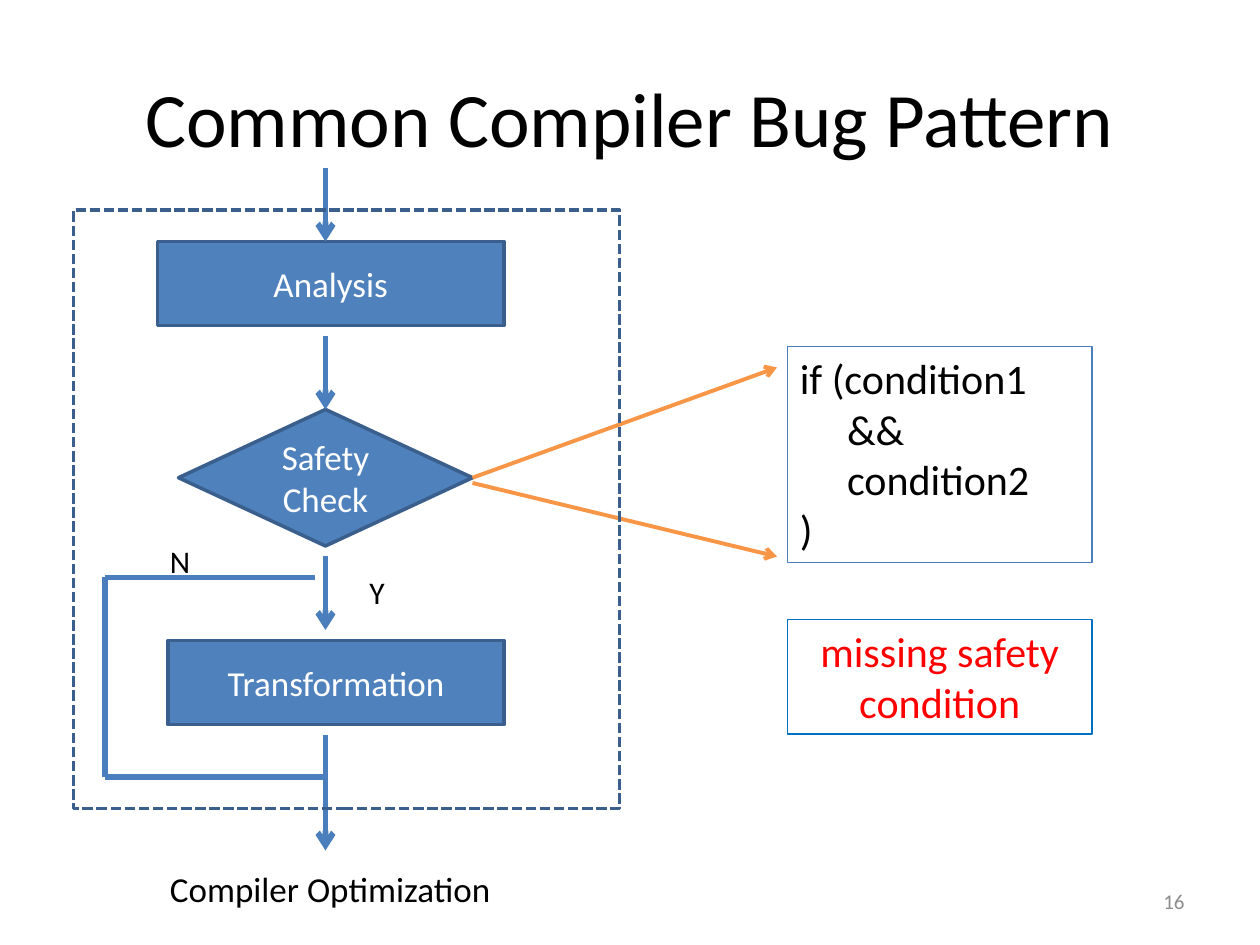
from lxml import etree
from pptx import Presentation
from pptx.dml.color import RGBColor
from pptx.enum.dml import MSO_LINE
from pptx.enum.shapes import MSO_CONNECTOR, MSO_SHAPE
from pptx.enum.text import MSO_ANCHOR, PP_ALIGN
from pptx.oxml.ns import qn
from pptx.util import Inches, Pt

LEFT, CENTER, RIGHT = PP_ALIGN.LEFT, PP_ALIGN.CENTER, PP_ALIGN.RIGHT
TOP, MIDDLE = MSO_ANCHOR.TOP, MSO_ANCHOR.MIDDLE
PROCESS, DECISION = MSO_SHAPE.FLOWCHART_PROCESS, MSO_SHAPE.FLOWCHART_DECISION
RECTANGLE = MSO_SHAPE.RECTANGLE

COLORS = {
    "black": "000000", "white": "FFFFFF", "gray": "8C8C8C", "red": "FF0000",
    "block": "4F81BD", "border": "3A5F8C", "flow": "4B7EBC",
    "callout": "F79646", "warning": "0070C0",
}
FONT = "Calibri"

# Every length below is in grid cells: 12 to the inch, 120 columns by 90 rows.
COLUMNS, ROWS, CELLS_PER_INCH = 120, 90, 12
FLOW_X = 31
CODE_INDENT = 4.5

# Content: (text, box, size, color, alignment, anchor)
LABELS = [
    ("Common Compiler Bug Pattern", (6, 3.6, 108, 15), 44, "black", CENTER, MIDDLE),
    ("Y", (34, 54, 6, 4.8), 18, "black", LEFT, TOP),
    ("N", (15, 51, 7, 4.8), 18, "black", LEFT, TOP),
    ("Compiler Optimization", (15, 82, 36, 5.3), 20, "black", LEFT, TOP),
    ("16", (86, 83.4, 28, 4.8), 12, "gray", RIGHT, MIDDLE),
]
BLOCKS = [
    ("Analysis", PROCESS, (15, 23, 33, 8)),
    ("Safety Check", DECISION, (17, 39, 28, 13)),
    ("Transformation", PROCESS, (16, 61, 32, 8)),
]
CODE_LINES = [("if (condition1", 0), ("&&", 1), ("condition2", 1), (")", 0)]
CODE_BOX = (75, 33, 29, 20.6)
WARNING_TEXT, WARNING_BOX = "missing safety condition", (75, 59, 29, 10.9)
OPTIMIZATION_FRAME = (7, 20, 52, 57)

FLOW_ARROW_ROWS = [(16, 23), (32, 39), (53, 60), (70, 81)]
SKIP_PATH = [(30, 55), (10, 55), (10, 74), (FLOW_X, 74)]
CALLOUT_ARROWS = [((45, 45.5), (74, 35)), ((45, 46), (74, 53))]


def cells(*values):
    return [Inches(value / CELLS_PER_INCH) for value in values]


def rgb(name):
    return RGBColor.from_string(COLORS[name])


def write(shape, lines, size, color, alignment, anchor):
    """Fill a shape with (text, indent level) lines."""
    frame = shape.text_frame
    frame.word_wrap = True
    frame.vertical_anchor = anchor
    for index, (text, level) in enumerate(lines):
        paragraph = frame.add_paragraph() if index else frame.paragraphs[0]
        paragraph.text = text
        paragraph.alignment = alignment
        paragraph.font.name = FONT
        paragraph.font.size = Pt(size)
        paragraph.font.color.rgb = rgb(color)
        if level:
            indent = cells(level * CODE_INDENT)[0]
            paragraph._p.get_or_add_pPr().set("marL", str(indent))


def add_box(slide, kind, box, line, width, fill=None):
    shape = slide.shapes.add_shape(kind, *cells(*box))
    shape.shadow.inherit = False
    if fill:
        shape.fill.solid()
        shape.fill.fore_color.rgb = rgb(fill)
    else:
        shape.fill.background()
    shape.line.color.rgb = rgb(line)
    shape.line.width = Pt(width)
    return shape


def add_line(slide, start, end, color, width, arrow=False):
    connector = slide.shapes.add_connector(
        MSO_CONNECTOR.STRAIGHT, *cells(*start, *end))
    connector.line.color.rgb = rgb(color)
    connector.line.width = Pt(width)
    if arrow:
        etree.SubElement(connector.line._ln, qn("a:tailEnd"), type="arrow")
    etree.SubElement(connector._element.spPr, qn("a:effectLst"))


def main():
    presentation = Presentation()
    presentation.slide_width, presentation.slide_height = cells(COLUMNS, ROWS)
    slide = presentation.slides.add_slide(presentation.slide_layouts[6])

    # Title, branch labels, caption and page number
    for text, box, size, color, alignment, anchor in LABELS:
        label = slide.shapes.add_textbox(*cells(*box))
        write(label, [(text, 0)], size, color, alignment, anchor)

    # Flowchart blocks
    for text, kind, box in BLOCKS:
        block = add_box(slide, kind, box, "border", 2, "block")
        write(block, [(text, 0)], 20, "white", CENTER, MIDDLE)

    # Main flow and the path that skips the transformation
    for top, bottom in FLOW_ARROW_ROWS:
        add_line(slide, (FLOW_X, top), (FLOW_X, bottom), "flow", 3.25, arrow=True)
    for start, end in zip(SKIP_PATH, SKIP_PATH[1:]):
        add_line(slide, start, end, "flow", 3.25)

    # Safety check detail
    code = add_box(slide, RECTANGLE, CODE_BOX, "flow", 0.75)
    write(code, CODE_LINES, 24, "black", LEFT, TOP)
    for start, end in CALLOUT_ARROWS:
        add_line(slide, start, end, "callout", 2.25, arrow=True)
    warning = add_box(slide, RECTANGLE, WARNING_BOX, "warning", 0.75)
    write(warning, [(WARNING_TEXT, 0)], 24, "red", CENTER, TOP)

    # Dashed frame around the optimization
    frame = add_box(slide, RECTANGLE, OPTIMIZATION_FRAME, "border", 2)
    frame.line.dash_style = MSO_LINE.SQUARE_DOT

    presentation.save("out.pptx")


if __name__ == "__main__":
    main()
